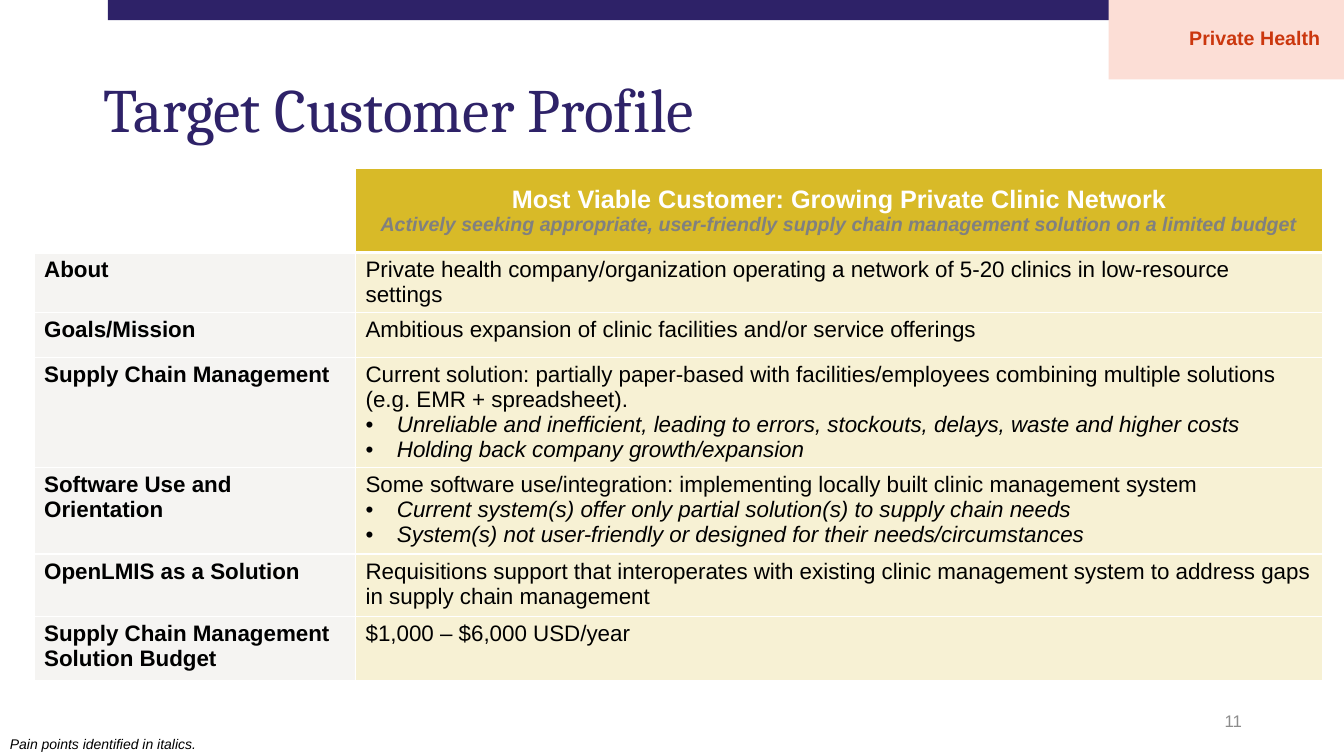
import pptx
import pptx.dml.color
import pptx.enum.shapes
import pptx.enum.text
import pptx.util
from lxml import etree
from pptx.oxml.ns import qn

Cm = pptx.util.Cm
Pt = pptx.util.Pt
RGB = pptx.dml.color.RGBColor
ALIGN = pptx.enum.text.PP_ALIGN
ANCHOR = pptx.enum.text.MSO_ANCHOR

NAVY = RGB(0x2E, 0x22, 0x68)
GOLD = RGB(0xD8, 0xBA, 0x28)
CREAM = RGB(0xF7, 0xF1, 0xD4)
PALE_GREY = RGB(0xF5, 0xF4, 0xF2)
PINK = RGB(0xFC, 0xDE, 0xD6)
RUST = RGB(0xCB, 0x37, 0x0E)
GREY = RGB(0x80, 0x80, 0x80)
NUMBER_GREY = RGB(0x8C, 0x8C, 0x8C)
BLACK = RGB(0, 0, 0)
WHITE = RGB(0xFF, 0xFF, 0xFF)

COLUMN_WIDTHS = (8.1, 24.38)
HEADER_HEIGHT = 2.11

# Each row: height in cm, label, statement, pain points
PROFILE = [
    (1.47, "About",
     "Private health company/organization operating a network of 5-20 clinics in low-resource settings", []),
    (1.14, "Goals/Mission",
     "Ambitious expansion of clinic facilities and/or service offerings", []),
    (2.77, "Supply Chain Management",
     "Current solution: partially paper-based with facilities/employees combining multiple solutions "
     "(e.g. EMR + spreadsheet).",
     ["Unreliable and inefficient, leading to errors, stockouts, delays, waste and higher costs",
      "Holding back company growth/expansion"]),
    (2.18, "Software Use and Orientation",
     "Some software use/integration: implementing locally built clinic management system",
     ["Current system(s) offer only partial solution(s) to supply chain needs",
      "System(s) not user-friendly or designed for their needs/circumstances"]),
    (1.57, "OpenLMIS as a Solution",
     "Requisitions support that interoperates with existing clinic management system to address gaps "
     "in supply chain management", []),
    (1.63, "Supply Chain Management Solution Budget", "$1,000 – $6,000 USD/year", []),
]


def add_run(paragraph, text, size, color, font="Arial", bold=False, italic=False):
    run = paragraph.add_run()
    run.text = text
    run.font.name = font
    run.font.size = Pt(size)
    run.font.color.rgb = color
    run.font.bold = bold
    run.font.italic = italic


def add_block(slide, left, top, width, height, fill):
    block = slide.shapes.add_shape(pptx.enum.shapes.MSO_SHAPE.RECTANGLE,
                                   Cm(left), Cm(top), Cm(width), Cm(height))
    block.shadow.inherit = False
    block.fill.solid()
    block.fill.fore_color.rgb = fill
    block.line.fill.background()
    return block


def add_note(slide, left, top, width, height, wrap=True):
    note = slide.shapes.add_textbox(Cm(left), Cm(top), Cm(width), Cm(height))
    note.text_frame.word_wrap = wrap
    return note.text_frame


def add_bullet(paragraph):
    properties = paragraph._p.get_or_add_pPr()
    properties.set("marL", str(Cm(0.79)))
    properties.set("indent", str(-Cm(0.79)))
    etree.SubElement(properties, qn("a:buFont"), typeface="Arial")
    etree.SubElement(properties, qn("a:buChar"), char="•")


def style_cell(cell, fill, top=1, bottom=1):
    properties = cell._tc.get_or_add_tcPr()
    for side, points in (("L", 1), ("R", 1), ("T", top), ("B", bottom)):
        border = etree.SubElement(properties, qn("a:ln" + side), w=str(Pt(points)))
        color = etree.SubElement(border, qn("a:solidFill"))
        etree.SubElement(color, qn("a:srgbClr"), val=str(WHITE))
    if fill is None:
        cell.fill.background()
    else:
        cell.fill.solid()
        cell.fill.fore_color.rgb = fill


def add_title(slide, text):
    title = slide.shapes.title
    title.left, title.top, title.width, title.height = Cm(2.36), Cm(2.01), Cm(19.43), Cm(1.8)
    frame = title.text_frame
    frame.auto_size = pptx.enum.text.MSO_AUTO_SIZE.NONE
    frame.vertical_anchor = ANCHOR.BOTTOM
    heading = frame.paragraphs[0]
    heading.alignment = ALIGN.LEFT
    heading.line_spacing = 0.9
    add_run(heading, text, 44, NAVY, font="Cambria")


def add_profile_table(slide):
    heights = [HEADER_HEIGHT] + [row[0] for row in PROFILE]
    profile = slide.shapes.add_table(len(heights), 2, Cm(0.86), Cm(4.25),
                                     Cm(sum(COLUMN_WIDTHS)), Cm(sum(heights))).table
    profile.first_row = profile.horz_banding = False
    for column, width in zip(profile.columns, COLUMN_WIDTHS):
        column.width = Cm(width)
    for row, height in zip(profile.rows, heights):
        row.height = Cm(height)

    # Header row
    style_cell(profile.cell(0, 0), None, bottom=3)
    customer = profile.cell(0, 1)
    style_cell(customer, GOLD, bottom=3)
    customer.vertical_anchor = ANCHOR.MIDDLE
    headline = customer.text_frame.paragraphs[0]
    add_run(headline, "Most Viable Customer: Growing Private Clinic Network", 18, WHITE, bold=True)
    tagline = customer.text_frame.add_paragraph()
    add_run(tagline, "Actively seeking appropriate, user-friendly supply chain management solution "
                     "on a limited budget", 14, GREY, bold=True, italic=True)
    headline.alignment = tagline.alignment = ALIGN.CENTER

    # Profile rows
    for index, (_, label, statement, pain_points) in enumerate(PROFILE, start=1):
        top = 3 if index == 1 else 1
        label_cell, detail_cell = profile.cell(index, 0), profile.cell(index, 1)
        style_cell(label_cell, PALE_GREY, top)
        style_cell(detail_cell, CREAM, top)
        add_run(label_cell.text_frame.paragraphs[0], label, 16, BLACK, bold=True)
        add_run(detail_cell.text_frame.paragraphs[0], statement, 16, BLACK)
        for pain_point in pain_points:
            paragraph = detail_cell.text_frame.add_paragraph()
            add_bullet(paragraph)
            add_run(paragraph, pain_point, 16, BLACK, italic=True)


def add_sector_tag(slide, text):
    tag = add_block(slide, 27.94, -0.03, 5.94, 2.03, PINK)
    frame = tag.text_frame
    frame.word_wrap = True
    frame.vertical_anchor = ANCHOR.MIDDLE
    frame.margin_left = Cm(2.03)
    frame.margin_top = frame.margin_right = frame.margin_bottom = Cm(0.33)
    sector = frame.paragraphs[0]
    sector.alignment = ALIGN.LEFT
    sector.line_spacing = 0.9
    add_run(sector, text, 14, RUST, bold=True)


def main():
    deck = pptx.Presentation()
    deck.slide_width, deck.slide_height = Cm(33.87), Cm(19.05)
    slide = deck.slides.add_slide(deck.slide_layouts[5])

    # Top band and title
    add_block(slide, 2.72, -0.05, 28.42, 0.56, NAVY)
    add_title(slide, "Target Customer Profile")

    # Customer profile
    add_profile_table(slide)
    add_sector_tag(slide, "Private Health")

    # Page number and footnote
    page_number = add_note(slide, 23.93, 17.65, 7.62, 1.02)
    page_number.vertical_anchor = ANCHOR.MIDDLE
    page_number.paragraphs[0].alignment = ALIGN.RIGHT
    add_run(page_number.paragraphs[0], "11", 12, NUMBER_GREY)
    footnote = add_note(slide, 0, 18.42, 5.23, 0.69, wrap=False)
    add_run(footnote.paragraphs[0], "Pain points identified in italics.", 10, BLACK, italic=True)

    deck.save("out.pptx")


if __name__ == "__main__":
    main()
